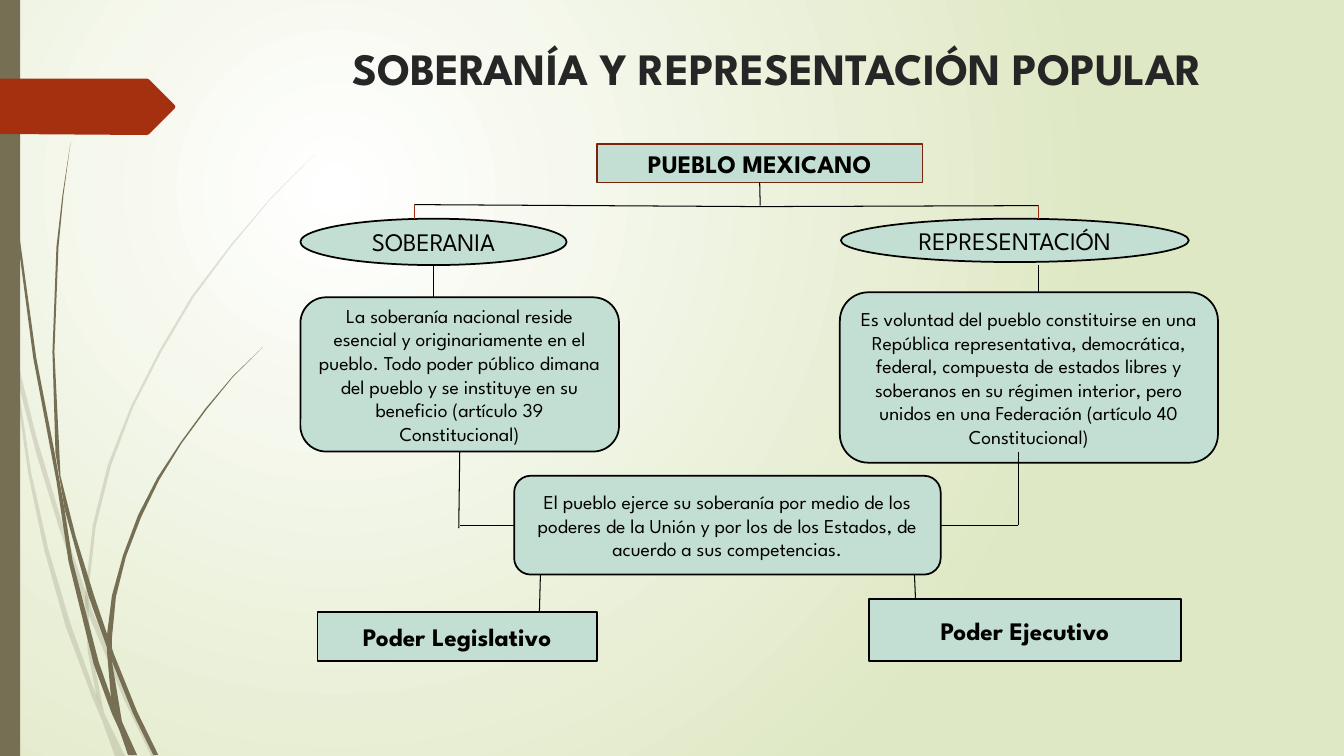
from pptx import Presentation
from pptx.dml.color import RGBColor
from pptx.enum.shapes import MSO_CONNECTOR, MSO_SHAPE
from pptx.enum.text import MSO_ANCHOR, PP_ALIGN
from pptx.oxml.ns import qn
from pptx.util import Inches, Pt
from lxml import etree

RECT, OVAL, ROUND = MSO_SHAPE.RECTANGLE, MSO_SHAPE.OVAL, MSO_SHAPE.ROUNDED_RECTANGLE
STRAIGHT = MSO_CONNECTOR.STRAIGHT
CENTER, TOP, MIDDLE = PP_ALIGN.CENTER, MSO_ANCHOR.TOP, MSO_ANCHOR.MIDDLE
FONT = "League Spartan"
COLORS = {"white": "FFFFFF", "lime": "DFE8C4", "olive": "766F54", "rust": "A53010",
          "title": "262626", "mint": "C3DED3", "black": "000000",
          "brown": "7A240C", "red": "9E2E0F"}

TITLE = "SOBERANÍA Y REPRESENTACIÓN POPULAR"
# name: (shape, (left, top, width, height), line colour, size, bold, text)
BOXES = {
    "people": (RECT, (5.92, 1.43, 3.23, 0.38), "brown", 18, True, "PUEBLO MEXICANO"),
    "sovereign": (OVAL, (2.98, 2.17, 2.64, 0.46), "black", 18, False, "SOBERANIA"),
    "represent": (OVAL, (8.34, 2.17, 3.45, 0.43), "black", 18, False, "REPRESENTACIÓN"),
    "art39": (ROUND, (2.98, 2.95, 3.16, 1.53), "black", 14, False,
              "La soberanía nacional reside esencial y originariamente en el pueblo. "
              "Todo poder público dimana del pueblo y se instituye en su beneficio "
              "(artículo 39 Constitucional)"),
    "art40": (ROUND, (8.33, 2.9, 3.75, 1.69), "black", 14, False,
              "Es voluntad del pueblo constituirse en una República representativa, "
              "democrática, federal, compuesta de estados libres y soberanos en su "
              "régimen interior, pero unidos en una Federación "
              "(artículo 40 Constitucional)"),
    "powers": (ROUND, (5.1, 4.72, 4.23, 0.98), "black", 14, False,
               "El pueblo ejerce su soberanía por medio de los poderes de la Unión "
               "y por los de los Estados, de acuerdo a sus competencias."),
    "law": (RECT, (3.15, 6.07, 2.77, 0.49), "black", 18, True, "Poder Legislativo"),
    "exec": (RECT, (8.62, 5.94, 3.09, 0.62), "black", 18, True, "Poder Ejecutivo"),
}
# (x1, y1, x2, y2, line colour)
LINES = [
    (7.54, 2.05, 10.3, 2.04, "black"), (7.54, 2.05, 4.11, 2.03, "black"),
    (4.11, 2.03, 4.11, 2.17, "red"), (10.3, 2.03, 10.3, 2.17, "red"),
    (4.3, 2.63, 4.3, 2.95, "black"), (10.3, 2.63, 10.3, 2.9, "black"),
    (4.56, 4.48, 4.55, 5.24, "black"), (10.1, 4.48, 10.1, 5.21, "black"),
    (9.07, 5.7, 9.08, 5.94, "black"), (5.36, 5.7, 5.35, 6.07, "black"),
]
# (x1, y1, x2, y2, line colour, box, side): the end is joined to the box
JOINED = [
    (7.54, 2.04, 7.54, 1.81, "black", "people", 2),
    (4.56, 5.21, 5.1, 5.21, "black", "powers", 1),
    (10.1, 5.21, 9.33, 5.21, "black", "powers", 3),
]
TAG = [(0, 0.78), (1.46, 0.78), (1.48, 0.79), (1.73, 1.04), (1.74, 1.06),
       (1.73, 1.08), (1.48, 1.33), (1.46, 1.34), (0, 1.33)]
# Blades of grass: down one edge, then up the other
PALE = [
    [(0, 2.82), (0.09, 3.22), (0.17, 3.76), (0.31, 4.69), (0.48, 5.45), (0.7, 6.19),
     (0.93, 6.83), (1.05, 7.11), (1.24, 7.5), (1.14, 7.5), (1.01, 7.14), (0.92, 6.93),
     (0.65, 6.21), (0.44, 5.46), (0.28, 4.7), (0.11, 3.5), (0, 2.99)],
    [(0.14, 3.45), (0.36, 4.33), (0.62, 5.2), (0.92, 6.07), (1.27, 6.92), (1.55, 7.5),
     (1.5, 7.5), (1.23, 6.94), (0.88, 6.1), (0.58, 5.22), (0.36, 4.5), (0.17, 3.76)],
    [(3.12, 1.53), (2.68, 1.98), (2.29, 2.45), (1.92, 2.95), (1.6, 3.49), (1.32, 4.04),
     (1.1, 4.62), (0.95, 5.22), (0.88, 5.84), (0.88, 6.1), (0.91, 6.46), (1.03, 7.06),
     (0.96, 6.92), (0.87, 6.46), (0.84, 5.99), (0.85, 5.84), (0.92, 5.21), (1.07, 4.61),
     (1.3, 4.03), (1.58, 3.48), (1.9, 2.94), (2.28, 2.44), (2.68, 1.97)],
]
DARK = [
    [(0.03, 0), (0.04, 0.48), (0.07, 1.1), (0.17, 2.33), (0.33, 3.55), (0.56, 4.77),
     (0.68, 5.57), (0.93, 6.59), (1.11, 7.08), (1.3, 7.49), (1.33, 7.49), (1.22, 7.19),
     (1.1, 6.91), (0.98, 6.57), (0.72, 5.56), (0.64, 5.05), (0.55, 4.53), (0.36, 3.55),
     (0.19, 2.32), (0.08, 1.09), (0.05, 0.48), (0.04, 0)],
    [(0.7, 1.41), (0.62, 1.93), (0.56, 2.45), (0.52, 3.49), (0.55, 4.49), (0.64, 5.05),
     (0.88, 5.92), (1.11, 6.56), (1.32, 7.08), (1.52, 7.49), (1.57, 7.49), (1.36, 7.06),
     (1.13, 6.49), (0.93, 5.9), (0.75, 5.32), (0.6, 4.72), (0.54, 3.49), (0.58, 2.45),
     (0.63, 1.93)],
    [(2.61, 3.44), (2.31, 3.74), (2.05, 4.06), (1.8, 4.4), (1.58, 4.76), (1.4, 5.13),
     (1.25, 5.52), (1.15, 5.92), (1.11, 6.33), (1.11, 6.56), (1.21, 7.16), (1.36, 7.49),
     (1.27, 7.49), (1.16, 7.17), (1.1, 6.91), (1.06, 6.45), (1.06, 6.31), (1.11, 5.91),
     (1.22, 5.51), (1.37, 5.11), (1.56, 4.74), (1.79, 4.39), (2.04, 4.05), (2.31, 3.73)],
]


def rgb(name):
    return RGBColor.from_string(COLORS[name])


def paint(shape, fill, line=None):
    shape.shadow.inherit = False
    shape.fill.solid()
    shape.fill.fore_color.rgb = rgb(fill)
    if line:
        shape.line.color.rgb, shape.line.width = rgb(line), Pt(1.25)
    else:
        shape.line.fill.background()


def write(shape, text, size, bold, color, anchor):
    frame = shape.text_frame
    frame.word_wrap, frame.vertical_anchor = True, anchor
    para = frame.paragraphs[0]
    para.alignment = CENTER
    run = para.add_run()
    run.text = text
    run.font.name, run.font.size, run.font.bold = FONT, Pt(size), bold
    run.font.color.rgb = rgb(color)


def outline(points, fill):
    dots = [(Inches(x), Inches(y)) for x, y in points]
    pen = slide.shapes.build_freeform(*dots[0])
    pen.add_line_segments(dots[1:], close=True)
    shape = pen.convert_to_shape()
    paint(shape, fill)
    return shape


def link(x1, y1, x2, y2, color):
    line = slide.shapes.add_connector(STRAIGHT, *map(Inches, (x1, y1, x2, y2)))
    line.line.color.rgb, line.line.width = rgb(color), Pt(0.75)
    etree.SubElement(line._element.spPr, qn("a:effectLst"))
    return line


deck = Presentation()
deck.slide_width, deck.slide_height = Inches(13.33), Inches(7.5)
slide = deck.slides.add_slide(deck.slide_layouts[6])

back = slide.background.fill
back.gradient()
for stop, name, place in zip(back.gradient_stops, ("white", "lime"), (0, 1)):
    stop.color.rgb, stop.position = rgb(name), place
grad = slide.background._cSld.find(".//" + qn("a:gradFill"))
grad.remove(grad.find(qn("a:lin")))
glow = etree.SubElement(grad, qn("a:path"), path="circle")
etree.SubElement(glow, qn("a:fillToRect"), l="50000", t="50000", r="100000", b="100000")

for blade in PALE:
    leaf = outline(blade, "olive")
    tint = leaf._element.spPr.find(qn("a:solidFill"))[0]
    etree.SubElement(tint, qn("a:alpha"), val="20000")
for blade in DARK:
    outline(blade, "olive")

stripe = slide.shapes.add_shape(RECT, 0, 0, Inches(0.2), Inches(7.5))
paint(stripe, "olive")
outline(TAG, "rust")
head = slide.shapes.add_textbox(*map(Inches, (2.84, 0.35, 9.75, 0.8)))
write(head, TITLE, 32, True, "title", TOP)

made = {}
for name, (kind, spot, edge, size, bold, text) in BOXES.items():
    made[name] = slide.shapes.add_shape(kind, *map(Inches, spot))
    paint(made[name], "mint", edge)
    write(made[name], text, size, bold, "black", MIDDLE)
for row in LINES:
    link(*row)
for *row, name, side in JOINED:
    link(*row).end_connect(made[name], side)

deck.save("out.pptx")
